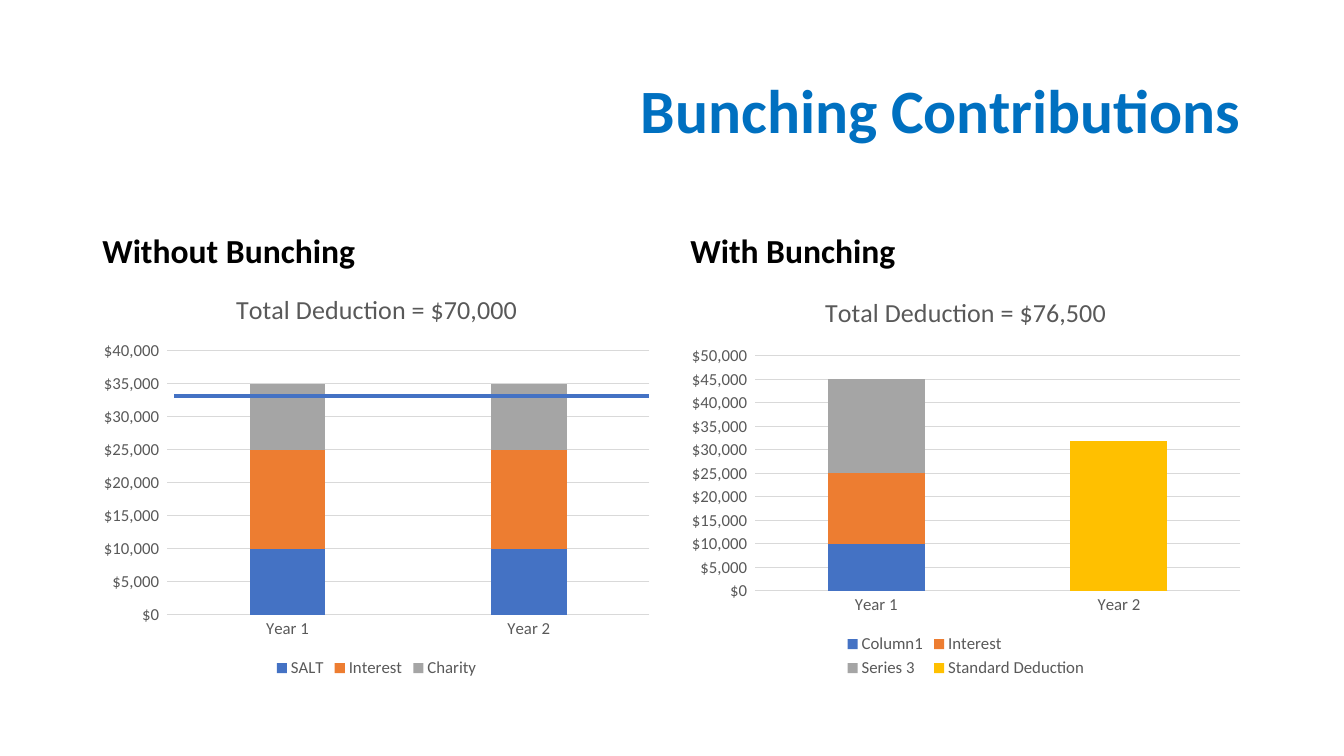
from dataclasses import dataclass

from lxml import etree
from pptx import Presentation
from pptx.chart.data import CategoryChartData
from pptx.dml.color import RGBColor
from pptx.enum.chart import XL_CHART_TYPE, XL_LEGEND_POSITION, XL_TICK_MARK
from pptx.enum.shapes import MSO_CONNECTOR
from pptx.enum.text import MSO_ANCHOR, PP_ALIGN
from pptx.oxml.ns import qn
from pptx.util import Pt

STACKED = XL_CHART_TYPE.COLUMN_STACKED
BOTTOM = XL_LEGEND_POSITION.BOTTOM
NO_TICK = XL_TICK_MARK.NONE
STRAIGHT = MSO_CONNECTOR.STRAIGHT
ANCHOR_MIDDLE, ANCHOR_BOTTOM = MSO_ANCHOR.MIDDLE, MSO_ANCHOR.BOTTOM
LEFT, RIGHT = PP_ALIGN.LEFT, PP_ALIGN.RIGHT
DOLLARS = '"$"#,##0_);("$"#,##0)'


@dataclass(frozen=True)
class Theme:
    font: str = "Calibri"
    title: str = "0070C0"
    text: str = "000000"
    muted: str = "595959"
    grid: str = "D9D9D9"
    threshold: str = "4472C4"
    series: tuple = ("4472C4", "ED7D31", "A5A5A5", "FFC000")
    title_size: float = 44
    heading_size: float = 24
    chart_title_size: float = 18.6
    label_size: float = 12


def rgb(color):
    return RGBColor.from_string(color)


def set_layout(parent, size, **lengths):
    """Place a chart part by hand; lengths (x, y, w, h) are points within the chart."""
    layout = parent.find(qn("c:layout"))
    if layout is None:
        layout = etree.Element(qn("c:layout"))
        parent.insert(0, layout)
    manual = etree.SubElement(layout, qn("c:manualLayout"))
    if "w" in lengths:
        etree.SubElement(manual, qn("c:layoutTarget")).set("val", "inner")
    for key in ("x", "y"):
        etree.SubElement(manual, qn(f"c:{key}Mode")).set("val", "edge")
    width, height = size
    for key, length in lengths.items():
        share = length / (width if key in "xw" else height)
        etree.SubElement(manual, qn(f"c:{key}")).set("val", f"{share:.4f}")


class SlideBuilder:
    def __init__(self, slide, theme):
        self.s = slide
        self.theme = theme

    def set_font(self, font, size, color, bold=False):
        font.name = self.theme.font
        font.size = Pt(size)
        font.bold = bold
        font.color.rgb = rgb(color)

    def text(self, box, text, size, color, anchor, align=LEFT):
        tf = self.s.shapes.add_textbox(*map(Pt, box)).text_frame
        tf.word_wrap = True
        tf.vertical_anchor = anchor
        p = tf.paragraphs[0]
        p.text = text
        p.alignment = align
        p.line_spacing = 0.9
        self.set_font(p.font, size, color, bold=True)

    def stacked_chart(self, box, title, series, gap, maximum, plot, title_at):
        t = self.theme
        data = CategoryChartData(number_format=DOLLARS)
        data.categories = ["Year 1", "Year 2"]
        for name, values in series:
            data.add_series(name, values)
        chart = self.s.shapes.add_chart(STACKED, *map(Pt, box), data).chart
        self.set_font(chart.font, t.label_size, t.muted)

        chart.has_title = True
        p = chart.chart_title.text_frame.paragraphs[0]
        p.text = title
        self.set_font(p.font, t.chart_title_size, t.muted)
        size = box[2:]
        x, y = title_at
        set_layout(chart.chart_title._element, size, x=x, y=y)
        x, y, w, h = plot
        set_layout(chart._chartSpace.chart.plotArea, size, x=x, y=y, w=w, h=h)

        chart.has_legend = True
        chart.legend.position = BOTTOM
        chart.legend.include_in_layout = False
        self.set_font(chart.legend.font, t.label_size, t.muted)

        bars = chart.plots[0]
        bars.gap_width = gap
        bars.overlap = 100
        bars.vary_by_categories = False
        for bar, color in zip(bars.series, t.series):
            bar.format.fill.solid()
            bar.format.fill.fore_color.rgb = rgb(color)
            bar.invert_if_negative = False

        years, dollars = chart.category_axis, chart.value_axis
        for axis in (years, dollars):
            axis.major_tick_mark = axis.minor_tick_mark = NO_TICK
            self.set_font(axis.tick_labels.font, t.label_size, t.muted)
        dollars.minimum_scale = 0
        dollars.maximum_scale = maximum
        dollars.major_unit = 5000
        dollars.format.line.fill.background()
        dollars.has_major_gridlines = True
        for line in (years.format.line, dollars.major_gridlines.format.line):
            line.color.rgb = rgb(t.grid)
            line.width = Pt(0.75)

    def rule(self, x1, x2, y, color, width):
        line = self.s.shapes.add_connector(STRAIGHT, Pt(x1), Pt(y), Pt(x2), Pt(y))
        line.line.color.rgb = rgb(color)
        line.line.width = Pt(width)
        etree.SubElement(line._element.spPr, qn("a:effectLst"))


def main():
    prs = Presentation()
    prs.slide_width, prs.slide_height = Pt(960), Pt(540)
    theme = Theme()
    slide = SlideBuilder(prs.slides.add_slide(prs.slide_layouts[6]), theme)

    slide.text((66, 28.8, 828, 104.4), "Bunching Contributions",
               theme.title_size, theme.title, ANCHOR_MIDDLE, RIGHT)

    without_bunching = dict(
        title="Total Deduction = $70,000",
        series=[("SALT", (10000, 10000)),
                ("Interest", (15000, 15000)),
                ("Charity", (10000, 10000))],
        gap=219, maximum=40000, plot=(53.3, 53.3, 344.7, 188.5),
        title_at=(99.3, 7.3))
    with_bunching = dict(
        title="Total Deduction = $76,500",
        series=[("Column1", (10000, None)),
                ("Interest", (15000, 0)),
                ("Series 3", (20000, 0)),
                ("Standard Deduction", (None, 32000))],
        gap=150, maximum=50000, plot=(53.3, 57, 346.7, 167.8),
        title_at=(100, 9.3))

    columns = [(66, 406, "Without Bunching", without_bunching),
               (486, 408, "With Bunching", with_bunching)]
    for left, width, heading, chart in columns:
        slide.text((left, 132.5, width, 64.8), heading,
                   theme.heading_size, theme.text, ANCHOR_BOTTOM)
        slide.stacked_chart((left, 197.3, width, 290), **chart)

    slide.rule(124.5, 463.5, 283, theme.threshold, 3)
    prs.save("out.pptx")


if __name__ == "__main__":
    main()
